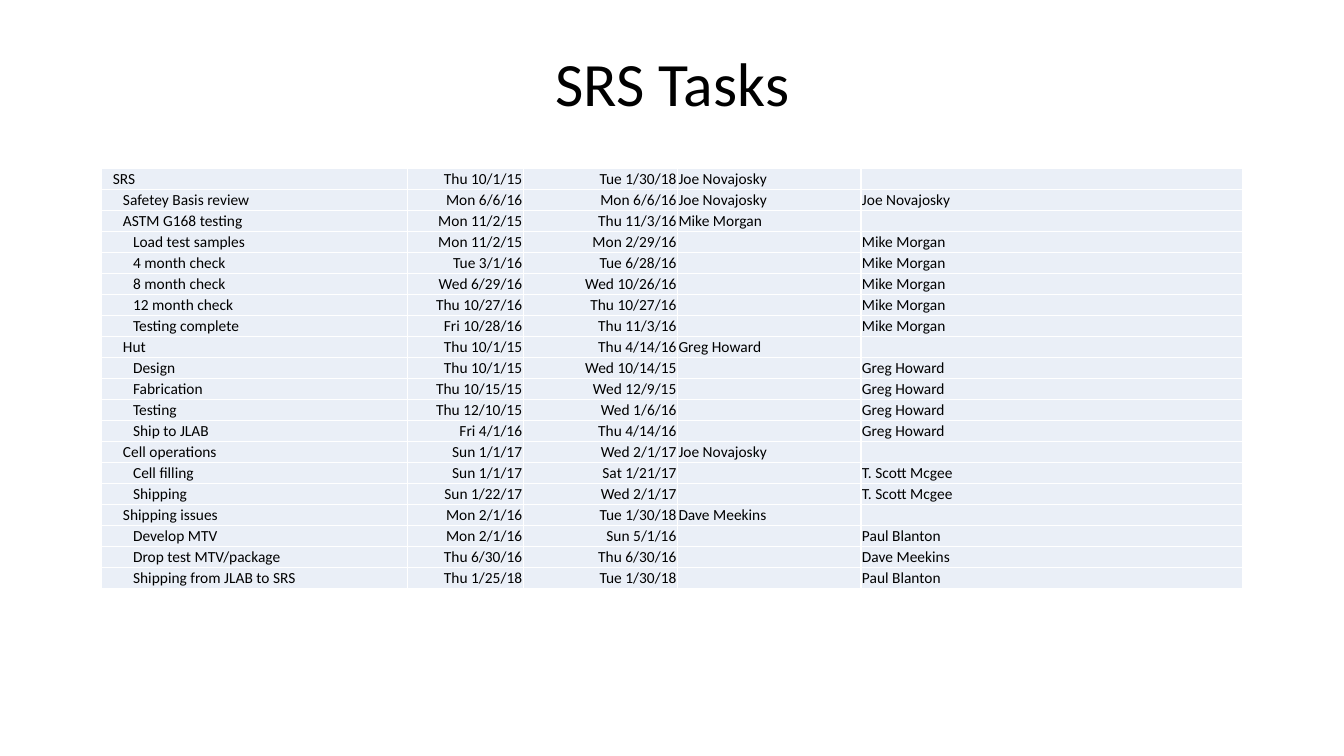
from lxml import etree
from pptx import Presentation
from pptx.dml.color import RGBColor
from pptx.enum.text import MSO_ANCHOR as Anchor, PP_ALIGN as Align
from pptx.oxml.ns import qn
from pptx.util import Inches, Pt

FONT = "Calibri"
INK = "000000"
CELL_FILL = "EAEFF7"
GRID = "FFFFFF"
TASK_SIZE = 11
INSET = 0.01
INDENT = 0.1
COLUMN_WIDTHS = [3.03, 1.15, 1.53, 1.82, 3.78]
ALIGNMENTS = [Align.LEFT, Align.RIGHT, Align.RIGHT, Align.LEFT, Align.LEFT]

TASKS = [
    (1, "SRS", "Thu 10/1/15", "Tue 1/30/18", "Joe Novajosky", ""),
    (2, "Safetey Basis review", "Mon 6/6/16", "Mon 6/6/16", "Joe Novajosky", "Joe Novajosky"),
    (2, "ASTM G168 testing", "Mon 11/2/15", "Thu 11/3/16", "Mike Morgan", ""),
    (3, "Load test samples", "Mon 11/2/15", "Mon 2/29/16", "", "Mike Morgan"),
    (3, "4 month check", "Tue 3/1/16", "Tue 6/28/16", "", "Mike Morgan"),
    (3, "8 month check", "Wed 6/29/16", "Wed 10/26/16", "", "Mike Morgan"),
    (3, "12 month check", "Thu 10/27/16", "Thu 10/27/16", "", "Mike Morgan"),
    (3, "Testing complete", "Fri 10/28/16", "Thu 11/3/16", "", "Mike Morgan"),
    (2, "Hut", "Thu 10/1/15", "Thu 4/14/16", "Greg Howard", ""),
    (3, "Design", "Thu 10/1/15", "Wed 10/14/15", "", "Greg Howard"),
    (3, "Fabrication", "Thu 10/15/15", "Wed 12/9/15", "", "Greg Howard"),
    (3, "Testing", "Thu 12/10/15", "Wed 1/6/16", "", "Greg Howard"),
    (3, "Ship to JLAB", "Fri 4/1/16", "Thu 4/14/16", "", "Greg Howard"),
    (2, "Cell operations", "Sun 1/1/17", "Wed 2/1/17", "Joe Novajosky", ""),
    (3, "Cell filling", "Sun 1/1/17", "Sat 1/21/17", "", "T. Scott Mcgee"),
    (3, "Shipping", "Sun 1/22/17", "Wed 2/1/17", "", "T. Scott Mcgee"),
    (2, "Shipping issues", "Mon 2/1/16", "Tue 1/30/18", "Dave Meekins", ""),
    (3, "Develop MTV", "Mon 2/1/16", "Sun 5/1/16", "", "Paul Blanton"),
    (3, "Drop test MTV/package", "Thu 6/30/16", "Thu 6/30/16", "", "Dave Meekins"),
    (3, "Shipping from JLAB to SRS", "Thu 1/25/18", "Tue 1/30/18", "", "Paul Blanton"),
]


def color(hex_code):
    return RGBColor.from_string(hex_code)


def format_runs(paragraph, size, align):
    paragraph.alignment = align
    for run in paragraph.runs:
        run.font.name = FONT
        run.font.size = Pt(size)
        run.font.color.rgb = color(INK)


def add_borders(cell):
    properties = cell._tc.get_or_add_tcPr()
    for side in ("L", "R", "T", "B"):
        border = etree.SubElement(properties, qn(f"a:ln{side}"), w=str(Pt(1)))
        fill = etree.SubElement(border, qn("a:solidFill"))
        etree.SubElement(fill, qn("a:srgbClr"), val=GRID)


def fill_cell(cell, text, align, level):
    add_borders(cell)
    cell.fill.solid()
    cell.fill.fore_color.rgb = color(CELL_FILL)
    cell.vertical_anchor = Anchor.MIDDLE
    cell.margin_left = Inches(INSET + INDENT * level)
    cell.margin_right = cell.margin_top = Inches(INSET)
    cell.margin_bottom = 0
    cell.text_frame.text = text
    paragraph = cell.text_frame.paragraphs[0]
    format_runs(paragraph, TASK_SIZE, align)
    if not text:
        etree.SubElement(paragraph._p, qn("a:endParaRPr"), sz=str(TASK_SIZE * 100))


def add_title(slide, left, top, width, height):
    title = slide.shapes.add_textbox(
        Inches(left), Inches(top), Inches(width), Inches(height)).text_frame
    title.word_wrap = True
    title.vertical_anchor = Anchor.MIDDLE
    title.text = "SRS Tasks"
    heading = title.paragraphs[0]
    heading.line_spacing = 0.9
    format_runs(heading, 44, Align.CENTER)


def add_schedule(slide, left, top, width, height):
    schedule = slide.shapes.add_table(
        len(TASKS), len(COLUMN_WIDTHS),
        Inches(left), Inches(top), Inches(width), Inches(height)).table
    schedule.first_row = False
    schedule.horz_banding = False
    for column, share in zip(schedule.columns, COLUMN_WIDTHS):
        column.width = Inches(width * share / sum(COLUMN_WIDTHS))
    for row, (level, *values) in zip(schedule.rows, TASKS):
        row.height = Inches(height / len(TASKS))
        for index, (cell, text, align) in enumerate(zip(row.cells, values, ALIGNMENTS)):
            fill_cell(cell, text, align, level if index == 0 else 0)


def main():
    deck = Presentation()
    deck.slide_width = Inches(13.33)
    deck.slide_height = Inches(7.5)
    slide = deck.slides.add_slide(deck.slide_layouts[6])
    add_title(slide, 0.92, 0.4, 11.5, 0.92)
    add_schedule(slide, 1.01, 1.67, 11.31, 4.17)
    deck.save("out.pptx")


if __name__ == "__main__":
    main()
